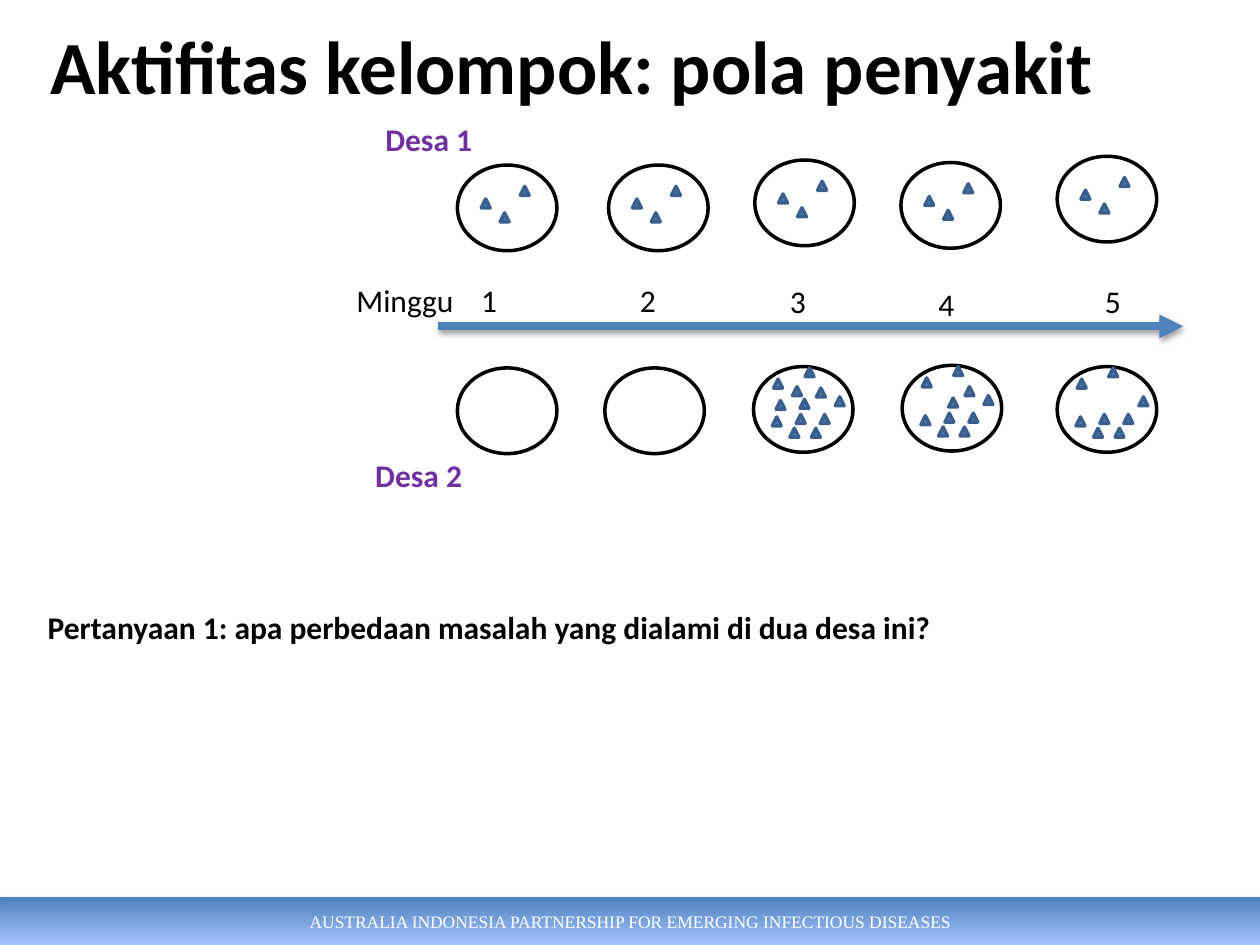
from typing import NamedTuple

from lxml.etree import SubElement
from pptx import Presentation
from pptx.dml.color import RGBColor
from pptx.enum.shapes import MSO_CONNECTOR, MSO_SHAPE
from pptx.enum.text import MSO_ANCHOR, MSO_AUTO_SIZE, PP_ALIGN
from pptx.oxml.ns import qn
from pptx.util import Inches, Pt

BLACK = RGBColor(0x00, 0x00, 0x00)
WHITE = RGBColor(0xFF, 0xFF, 0xFF)
BLUE = RGBColor(0x4F, 0x81, 0xBD)
DARK_BLUE = RGBColor(0x3A, 0x5F, 0x8C)
LIGHT_BLUE = RGBColor(0xA4, 0xC4, 0xFF)
PURPLE = RGBColor(0x70, 0x30, 0xA0)

VILLAGE_WIDTH, VILLAGE_HEIGHT, CASE_SIZE = 0.79, 0.68, 0.07

# Case positions within a village; later weeks show the first few of the list
SPORADIC_CASES = [(0.19, 0.27), (0.34, 0.38), (0.5, 0.17)]
OUTBREAK_CASES = [
    (0.34, 0.38), (0.53, 0.38), (0.46, 0.49), (0.15, 0.4),
    (0.16, 0.1), (0.41, 0.01), (0.65, 0.24), (0.29, 0.49),
    (0.5, 0.17), (0.37, 0.26),
    (0.18, 0.27), (0.31, 0.16),
]


class Village(NamedTuple):
    left: float
    top: float
    cases: list


class Label(NamedTuple):
    text: str
    left: float
    top: float
    width: float
    color: RGBColor = BLACK
    bold: bool = False


VILLAGES = [
    # Desa 1: the same few cases every week
    Village(3.63, 1.31, SPORADIC_CASES),
    Village(4.83, 1.31, SPORADIC_CASES),
    Village(5.99, 1.27, SPORADIC_CASES),
    Village(7.15, 1.29, SPORADIC_CASES),
    Village(8.39, 1.24, SPORADIC_CASES),
    # Desa 2: a sudden outbreak in week 3
    Village(3.63, 2.92, []),
    Village(4.8, 2.92, []),
    Village(5.98, 2.91, OUTBREAK_CASES),
    Village(7.16, 2.9, OUTBREAK_CASES[:10]),
    Village(8.39, 2.91, OUTBREAK_CASES[:8]),
]

LABELS = [
    Label("Pertanyaan 1: apa perbedaan masalah yang dialami di dua desa ini?",
          0.28, 4.78, 7.27, bold=True),
    Label("Minggu", 2.73, 2.18, 0.98),
    Label("1", 3.72, 2.18, 0.33),
    Label("2", 4.98, 2.18, 0.33),
    Label("3", 6.17, 2.19, 0.33),
    Label("4", 7.35, 2.21, 0.33),
    Label("5", 8.67, 2.19, 0.33),
    Label("Desa 1", 2.96, 0.9, 0.9, PURPLE, True),
    Label("Desa 2", 2.88, 3.57, 0.9, PURPLE, True),
]


def write_text(shape, text: str, color: RGBColor, **formats) -> None:
    span = shape.text_frame.paragraphs[0].add_run()
    span.text = text
    for name, value in formats.items():
        setattr(span.font, name, value)
    span.font.color.rgb = color


def add_shadow(shape, opacity: int, distance: float) -> None:
    effects = SubElement(shape._element.spPr, qn("a:effectLst"))
    shadow = SubElement(effects, qn("a:outerShdw"), blurRad=str(Pt(3.1)),
                        dist=str(Pt(distance)), dir="5400000", rotWithShape="0")
    color = SubElement(shadow, qn("a:srgbClr"), val=str(BLACK))
    SubElement(color, qn("a:alpha"), val=str(opacity * 1000))


def add_symbol(page, kind: MSO_SHAPE, left: float, top: float, width: float,
               height: float, fill: RGBColor, line: RGBColor) -> None:
    symbol = page.shapes.add_shape(
        kind, Inches(left), Inches(top), Inches(width), Inches(height))
    symbol.shadow.inherit = False
    symbol.fill.solid()
    symbol.fill.fore_color.rgb = fill
    symbol.line.color.rgb = line
    symbol.line.width = Pt(2)


def add_village(page, village: Village) -> None:
    add_symbol(page, MSO_SHAPE.OVAL, village.left, village.top,
               VILLAGE_WIDTH, VILLAGE_HEIGHT, WHITE, BLACK)
    for across, down in village.cases:
        add_symbol(page, MSO_SHAPE.ISOSCELES_TRIANGLE, village.left + across,
                   village.top + down, CASE_SIZE, CASE_SIZE, BLUE, DARK_BLUE)


def add_label(page, label: Label) -> None:
    box = page.shapes.add_textbox(Inches(label.left), Inches(label.top),
                                  Inches(label.width), Inches(0.4))
    box.text_frame.word_wrap = False
    box.text_frame.auto_size = MSO_AUTO_SIZE.SHAPE_TO_FIT_TEXT
    write_text(box, label.text, label.color,
               name="Calibri", size=Pt(18), bold=label.bold)


def add_footer(page) -> None:
    footer = page.shapes.add_shape(
        MSO_SHAPE.RECTANGLE, Inches(0), Inches(7.12), Inches(10), Inches(0.38))
    footer.fill.gradient()
    footer.fill.gradient_angle = 270
    for stop, position, color in zip(footer.fill.gradient_stops, (0, 1),
                                     (BLUE, LIGHT_BLUE)):
        stop.position = position
        stop.color.rgb = color
    footer.line.fill.background()
    add_shadow(footer, 35, 1.8)
    footer.text_frame.vertical_anchor = MSO_ANCHOR.MIDDLE
    footer.text_frame.paragraphs[0].alignment = PP_ALIGN.CENTER
    write_text(footer,
               "AUSTRALIA INDONESIA PARTNERSHIP FOR EMERGING INFECTIOUS DISEASES",
               WHITE, name="Times New Roman", size=Pt(10))


def add_timeline(page) -> None:
    arrow = page.shapes.add_connector(
        MSO_CONNECTOR.STRAIGHT, Inches(3.48), Inches(2.59), Inches(9.39), Inches(2.59))
    arrow.line.color.rgb = BLUE
    arrow.line.width = Pt(4.5)
    SubElement(arrow.line._get_or_add_ln(), qn("a:tailEnd"), type="triangle")
    add_shadow(arrow, 38, 1.6)


def add_title(page) -> None:
    title = page.shapes.add_textbox(Inches(0.3), Inches(0.13), Inches(9), Inches(0.77))
    title.text_frame.word_wrap = True
    title.text_frame.vertical_anchor = MSO_ANCHOR.MIDDLE
    write_text(title, "Aktifitas kelompok: pola penyakit", BLACK,
               name="Calibri", size=Pt(42.9), bold=True)


def main() -> None:
    deck = Presentation()
    deck.slide_width, deck.slide_height = Inches(10), Inches(7.5)
    page = deck.slides.add_slide(deck.slide_layouts[6])

    add_footer(page)
    add_timeline(page)
    for village in VILLAGES:
        add_village(page, village)
    for label in LABELS:
        add_label(page, label)
    add_title(page)

    deck.save("out.pptx")


if __name__ == "__main__":
    main()
